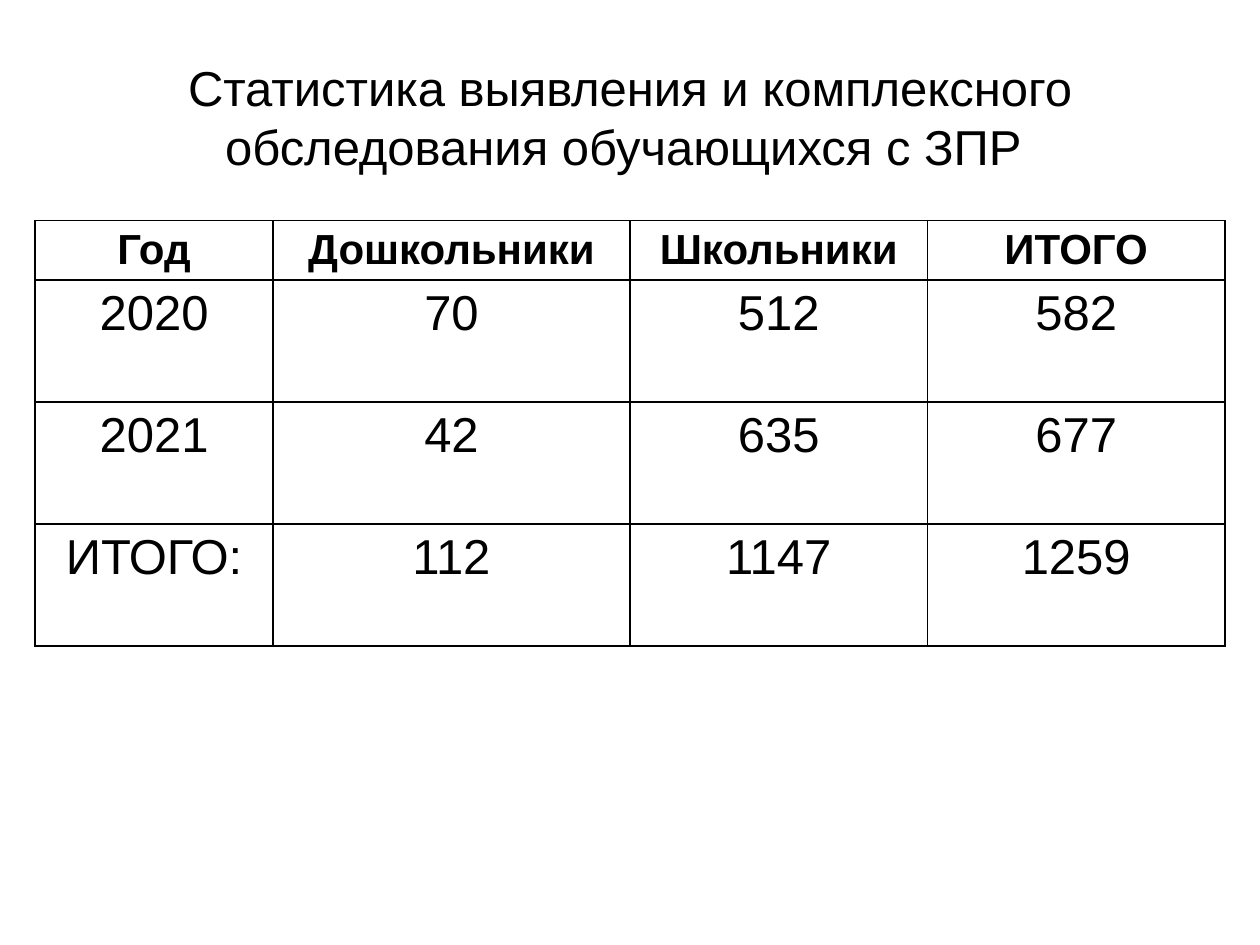
from lxml.etree import SubElement
from pptx import Presentation
from pptx.dml.color import RGBColor
from pptx.enum.text import MSO_ANCHOR, PP_ALIGN
from pptx.oxml.ns import qn
from pptx.util import Pt

BLACK = RGBColor(0, 0, 0)
WHITE = RGBColor(255, 255, 255)
FONT = "Arial"

TITLE = "Статистика выявления и комплексного обследования обучающихся с ЗПР "
ROWS = [
    ("Год", "Дошкольники", "Школьники", "ИТОГО"),
    ("2020", "70", "512", "582"),
    ("2021", "42", "635", "677"),
    ("ИТОГО:", "112", "1147", "1259"),
]
COL_WIDTHS = (136, 204, 170, 170)
HEADER_HEIGHT, ROW_HEIGHT = 34, 69.7


def format_paragraph(p, size, bold=False):
    p.alignment = PP_ALIGN.CENTER
    p.font.name = FONT
    p.font.size = Pt(size)
    p.font.bold = bold
    p.font.color.rgb = BLACK


def add_title(slide):
    title = slide.shapes.title
    title.left, title.top, title.width, title.height = Pt(36), Pt(21.6), Pt(648), Pt(90)
    tf = title.text_frame
    tf.text = TITLE
    tf.word_wrap = True
    tf.vertical_anchor = MSO_ANCHOR.MIDDLE
    format_paragraph(tf.paragraphs[0], 28)


def set_borders(cell):
    """Draw a thin line on all four sides; must run before the cell is filled."""
    tc_pr = cell._tc.get_or_add_tcPr()
    for side in ("a:lnL", "a:lnR", "a:lnT", "a:lnB"):
        ln = SubElement(tc_pr, qn(side), w=str(Pt(1)))
        fill = SubElement(ln, qn("a:solidFill"))
        SubElement(fill, qn("a:srgbClr"), val=str(BLACK))


def format_cell(cell, text, is_header):
    set_borders(cell)
    cell.fill.solid()
    cell.fill.fore_color.rgb = WHITE
    cell.text = text
    format_paragraph(cell.text_frame.paragraphs[0], 24 if is_header else 28, is_header)


def add_statistics_table(slide):
    heights = [HEADER_HEIGHT] + [ROW_HEIGHT] * (len(ROWS) - 1)
    table = slide.shapes.add_table(
        len(ROWS), len(COL_WIDTHS), Pt(20), Pt(126),
        Pt(sum(COL_WIDTHS)), Pt(sum(heights)),
    ).table
    for column, width in zip(table.columns, COL_WIDTHS):
        column.width = Pt(width)
    for i, (row, height, values) in enumerate(zip(table.rows, heights, ROWS)):
        row.height = Pt(height)
        for cell, value in zip(row.cells, values):
            format_cell(cell, value, is_header=i == 0)


def main():
    prs = Presentation()
    prs.slide_width, prs.slide_height = Pt(720), Pt(540)
    slide = prs.slides.add_slide(prs.slide_layouts[5])
    add_title(slide)
    add_statistics_table(slide)
    prs.save("out.pptx")


if __name__ == "__main__":
    main()
